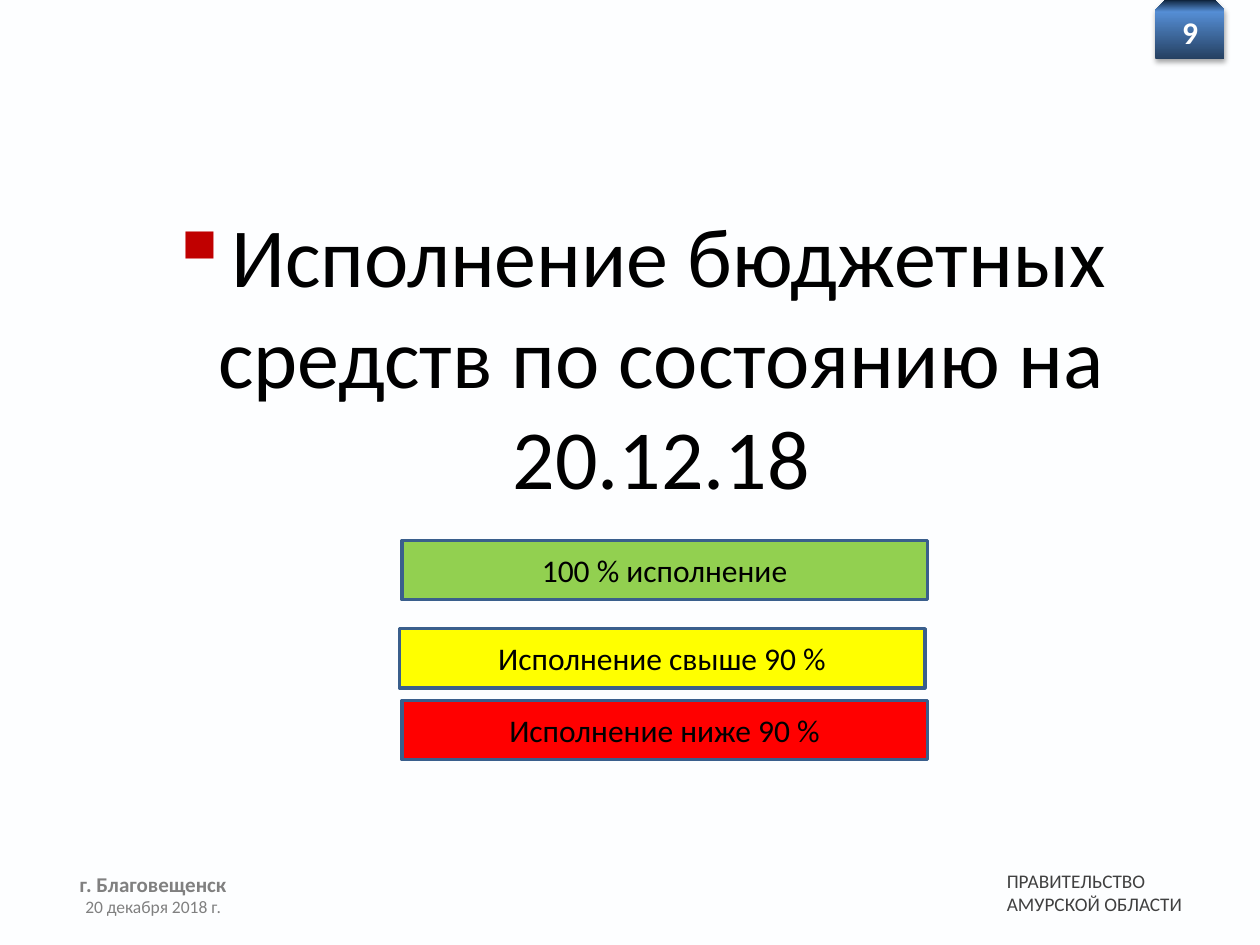
from dataclasses import dataclass, field

from lxml.etree import SubElement
from pptx import Presentation
from pptx.dml.color import RGBColor
from pptx.enum.shapes import MSO_SHAPE as SHAPE
from pptx.enum.text import MSO_ANCHOR as ANCHOR, PP_ALIGN as ALIGN
from pptx.oxml import parse_xml
from pptx.oxml.ns import nsdecls, qn
from pptx.util import Inches, Pt

PAPER = RGBColor(0xFD, 0xFE, 0xFF)
WHITE = RGBColor(0xFF, 0xFF, 0xFF)
BLACK = RGBColor(0x00, 0x00, 0x00)
DARK_GREY = RGBColor(0x40, 0x40, 0x40)
GREY = RGBColor(0x80, 0x80, 0x80)
BULLET_RED = RGBColor(0xC0, 0x00, 0x00)
OUTLINE = RGBColor(0x3A, 0x5F, 0x8C)
GREEN = RGBColor(0x92, 0xD0, 0x50)
YELLOW = RGBColor(0xFF, 0xFF, 0x00)
RED = RGBColor(0xFF, 0x00, 0x00)
# Badge gradient, bottom to top
BADGE_STOPS = ((0, RGBColor(0x25, 0x40, 0x61)),
               (80, RGBColor(0x55, 0x8E, 0xD5)),
               (100, RGBColor(0x0F, 0x24, 0x3E)))


@dataclass
class Area:
    """A rectangle in percent of the slide's width and height."""
    left: float
    top: float
    width: float
    height: float

    def emu(self) -> list[int]:
        w, h = Inches(10), Inches(7.5)
        return [round(share * side / 100) for share, side in
                zip((self.left, self.top, self.width, self.height), (w, h, w, h))]


@dataclass
class Label:
    area: Area
    lines: tuple[str, ...]
    size: int
    color: RGBColor
    bold: bool = False
    bullet: str = ""
    align: ALIGN = ALIGN.CENTER
    frame: dict = field(default_factory=dict)


@dataclass
class LegendBar:
    left: float
    top: float
    text: str
    fill: RGBColor


NO_MARGINS = dict.fromkeys(
    ("margin_left", "margin_top", "margin_right", "margin_bottom"), 0)
MIDDLE = {"vertical_anchor": ANCHOR.MIDDLE}

LABELS = (
    Label(Area(79.9, 92, 18.9, 4.93), ("ПРАВИТЕЛЬСТВО", "АМУРСКОЙ ОБЛАСТИ"),
          11, DARK_GREY, align=ALIGN.LEFT, frame=NO_MARGINS),
    Label(Area(91.7, 0.67, 5.5, 5.73), ("9",), 18, WHITE, bold=True),
    Label(Area(3.5, 89.87, 17.3, 7.33), ("г. Благовещенск",), 12, GREY,
          bold=True, frame=MIDDLE),
    Label(Area(3.5, 94.13, 17.3, 4.13), ("20 декабря 2018 г.",), 10, GREY),
    Label(Area(9.8, 20.93, 81.6, 45.6),
          ("Исполнение бюджетных средств по состоянию на 20.12.18",),
          48, BLACK, bullet="▪"),
)
BARS = (
    LegendBar(31.9, 57.2, "100 % исполнение", GREEN),
    LegendBar(31.7, 66.53, "Исполнение свыше 90 %", YELLOW),
    LegendBar(31.9, 74.13, "Исполнение ниже 90 %", RED),
)


def apply(target, values: dict) -> None:
    for name, value in values.items():
        setattr(target, name, value)


def add_bullet(p, char: str) -> None:
    pPr = p._p.get_or_add_pPr()
    pPr.set("marL", str(Inches(0.38)))
    pPr.set("indent", str(-Inches(0.38)))
    color = SubElement(pPr, qn("a:buClr"))
    SubElement(color, qn("a:srgbClr"), val=str(BULLET_RED))
    SubElement(pPr, qn("a:buChar"), char=char)


def write(sp, label: Label) -> None:
    tf = sp.text_frame
    apply(tf, {"word_wrap": True, **label.frame})
    for i, line in enumerate(label.lines):
        p = tf.add_paragraph() if i else tf.paragraphs[0]
        p.alignment = label.align
        if label.bullet:
            add_bullet(p, label.bullet)
        r = p.add_run()
        r.text = line
        apply(r.font, {"name": "Calibri", "size": Pt(label.size), "bold": label.bold})
        r.font.color.rgb = label.color


def draw_badge(s, area: Area) -> None:
    sp = s.shapes.add_shape(SHAPE.SNIP_2_SAME_RECTANGLE, *area.emu())
    sp.line.fill.background()
    stops = "".join(f'<a:gs pos="{pos * 1000}"><a:srgbClr val="{color}"/></a:gs>'
                    for pos, color in BADGE_STOPS)
    sp._element.spPr.find(qn("a:ln")).addprevious(parse_xml(
        f'<a:gradFill {nsdecls("a")} rotWithShape="1"><a:gsLst>{stops}</a:gsLst>'
        '<a:lin ang="16200000" scaled="0"/></a:gradFill>'))
    sp._element.spPr.append(parse_xml(
        f'<a:effectLst {nsdecls("a")}><a:outerShdw blurRad="{Pt(3.1)}" '
        f'dist="{Pt(1.8)}" dir="5400000" rotWithShape="0"><a:srgbClr val="{BLACK}">'
        '<a:alpha val="35000"/></a:srgbClr></a:outerShdw></a:effectLst>'))


def draw_label(s, label: Label) -> None:
    write(s.shapes.add_textbox(*label.area.emu()), label)


def draw_bar(s, bar: LegendBar) -> None:
    area = Area(bar.left, bar.top, 41.7, 6.27)
    sp = s.shapes.add_shape(SHAPE.RECTANGLE, *area.emu())
    sp.shadow.inherit = False
    sp.fill.solid()
    sp.fill.fore_color.rgb = bar.fill
    sp.line.color.rgb = OUTLINE
    sp.line.width = Pt(2)
    write(sp, Label(area, (bar.text,), 18, BLACK, frame=MIDDLE))


def main() -> None:
    prs = Presentation()
    apply(prs, {"slide_width": Inches(10), "slide_height": Inches(7.5)})
    s = prs.slides.add_slide(prs.slide_layouts[6])
    s.background.fill.solid()
    s.background.fill.fore_color.rgb = PAPER

    # Page number badge
    draw_badge(s, Area(91.7, 0, 5.5, 6.27))
    # Title, page number and footer
    for label in LABELS:
        draw_label(s, label)
    # Colour legend
    for bar in BARS:
        draw_bar(s, bar)

    prs.save("out.pptx")


if __name__ == "__main__":
    main()
